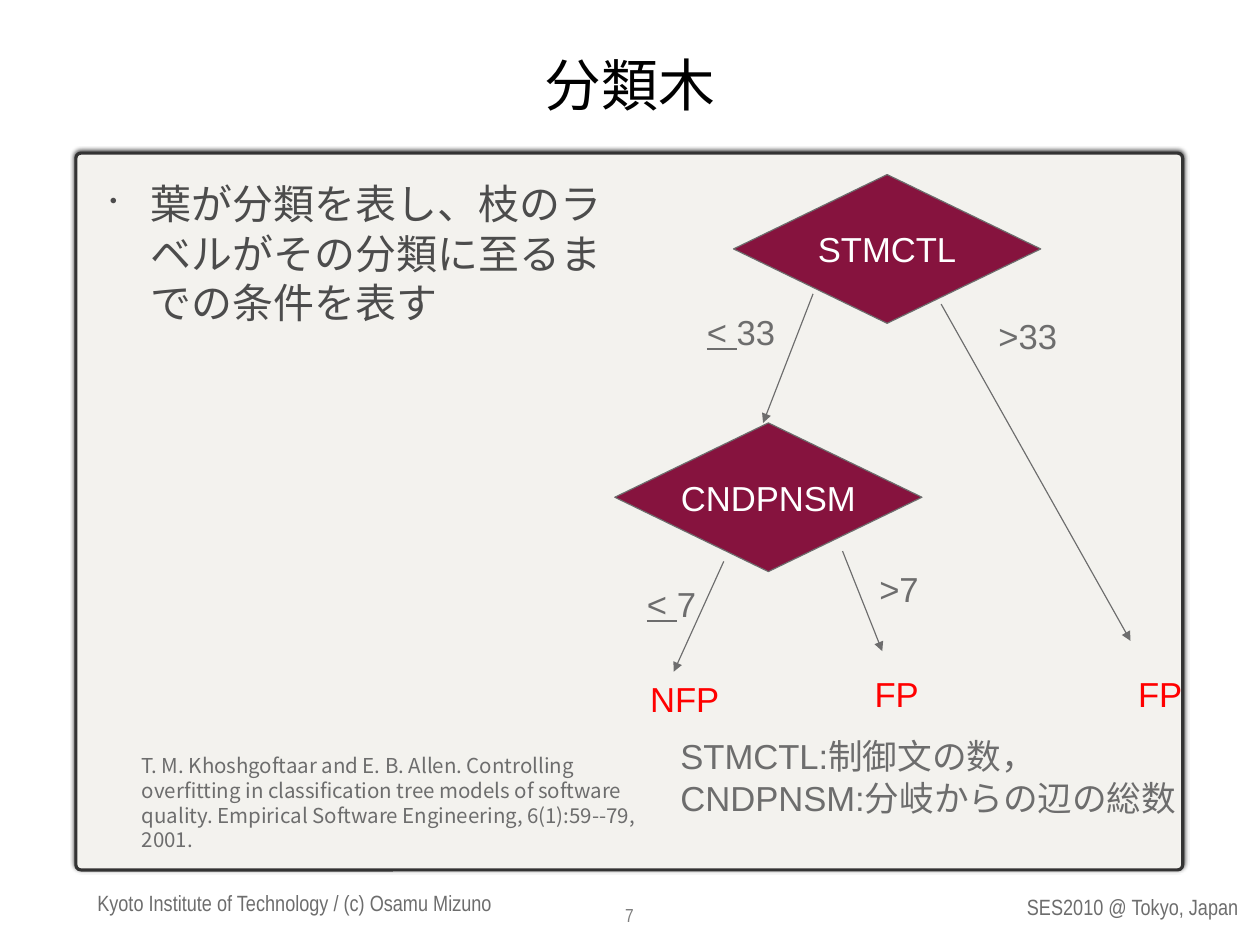
from lxml import etree
from pptx import Presentation
from pptx.dml.color import RGBColor
from pptx.enum.shapes import MSO_CONNECTOR, MSO_SHAPE
from pptx.enum.text import MSO_ANCHOR, PP_ALIGN
from pptx.oxml.ns import qn
from pptx.util import Cm, Pt

LEFT, CENTER, RIGHT = PP_ALIGN.LEFT, PP_ALIGN.CENTER, PP_ALIGN.RIGHT
TOP, MIDDLE = MSO_ANCHOR.TOP, MSO_ANCHOR.MIDDLE
BLACK = RGBColor(0x00, 0x00, 0x00)
WHITE = RGBColor(0xFF, 0xFF, 0xFF)
RED = RGBColor(0xFF, 0x00, 0x00)
MAROON = RGBColor(0x86, 0x13, 0x3E)
GRAY = RGBColor(0x6D, 0x6D, 0x6D)
LIGHT_GRAY = RGBColor(0x7F, 0x7F, 0x7F)
DARK_GRAY = RGBColor(0x4C, 0x4C, 0x4C)
PANEL_FILL = RGBColor(0xF3, 0xF2, 0xEE)
PANEL_LINE = RGBColor(0x33, 0x33, 0x33)
SANS, NARROW = "Arial", "Arial Narrow"

deck = Presentation()
deck.slide_width, deck.slide_height = Cm(28.22), Cm(21.16)
page = deck.slides.add_slide(deck.slide_layouts[6])
shapes = page.shapes


def write(shape, lines, size, font, color, align=LEFT, anchor=TOP,
          inset=(0.28, 0.15), wrap=True):
    """Fill a shape with paragraphs, each a list of run texts."""
    frame = shape.text_frame
    frame.word_wrap = wrap
    frame.vertical_anchor = anchor
    frame.margin_left = frame.margin_right = Cm(inset[0])
    frame.margin_top = frame.margin_bottom = Cm(inset[1])
    for index, spans in enumerate(lines):
        para = frame.add_paragraph() if index else frame.paragraphs[0]
        for text in spans:
            para.add_run().text = text
        para.alignment = align
        para.font.size = Pt(size)
        para.font.name = font
        para.font.color.rgb = color
    return frame.paragraphs


def text_box(left, top, width, height, lines, *style, **options):
    box = shapes.add_textbox(Cm(left), Cm(top), Cm(width), Cm(height))
    return write(box, lines, *style, **options)


# Panel with a soft shadow
panel = shapes.add_shape(MSO_SHAPE.ROUNDED_RECTANGLE,
                         Cm(1.7), Cm(3.43), Cm(24.79), Cm(16.05))
panel.adjustments[0] = 0.007
panel.fill.solid()
panel.fill.fore_color.rgb = PANEL_FILL
panel.line.color.rgb = PANEL_LINE
panel.line.width = Pt(2)
effects = etree.SubElement(panel._element.spPr, qn("a:effectLst"))
shadow = etree.SubElement(effects, qn("a:outerShdw"), blurRad=str(Pt(3)),
                          dist=str(Pt(1)), dir="16200000", rotWithShape="0")
shadow_color = etree.SubElement(shadow, qn("a:srgbClr"), val="000000")
etree.SubElement(shadow_color, qn("a:alpha"), val="80000")

# Footer
text_box(17.88, 19.89, 9.86, 0.81, [["SES2010 @ Tokyo, Japan"]],
         14, NARROW, GRAY, RIGHT, MIDDLE, inset=(0, 0))
text_box(2.18, 19.81, 11, 0.79,
         [["Kyoto Institute of Technology / (c) Osamu Mizuno"]],
         14, NARROW, GRAY, LEFT, MIDDLE, inset=(0, 0))
text_box(13.72, 20.09, 0.76, 0.81, [["7"]], 12, NARROW, LIGHT_GRAY, wrap=False)

# Title
title = text_box(2.36, 0.56, 23.5, 2.84, [["分類木"]],
                 36, NARROW, BLACK, CENTER, MIDDLE, inset=(0.1, 0.1))
title[0].line_spacing = 0.9

# Bulleted statement
body = shapes.add_textbox(Cm(2.36), Cm(3.91), Cm(11.33), Cm(15.27))
properties = body.text_frame.paragraphs[0]._p.get_or_add_pPr()
properties.set("marL", str(Cm(0.91)))
properties.set("indent", str(-Cm(0.91)))
etree.SubElement(properties, qn("a:buSzPct"), val="52000")
etree.SubElement(properties, qn("a:buChar"), char="•")
write(body, [["葉が分類を表し、枝のラベルがその分類に至るまでの条件を表す"]],
      26, "Lato", DARK_GRAY, inset=(0.1, 0.1))

# Decision nodes
for name, left, top in (("STMCTL", 16.43, 3.91), ("CNDPNSM", 13.77, 9.47)):
    node = shapes.add_shape(MSO_SHAPE.DIAMOND, Cm(left), Cm(top), Cm(6.88), Cm(3.33))
    node.shadow.inherit = False
    node.fill.solid()
    node.fill.fore_color.rgb = MAROON
    node.line.color.rgb = GRAY
    node.line.width = Pt(0.75)
    write(node, [[name]], 22, SANS, WHITE, CENTER, MIDDLE, wrap=False)

# Branch arrows
for points in ((18.21, 6.58, 17.09, 9.47), (21.08, 6.81, 25.32, 14.35),
               (16.21, 12.57, 15.09, 15.04), (18.87, 12.34, 19.76, 14.58)):
    branch = shapes.add_connector(MSO_CONNECTOR.STRAIGHT, *map(Cm, points))
    branch.line.color.rgb = GRAY
    branch.line.width = Pt(0.75)
    etree.SubElement(branch.line._get_or_add_ln(), qn("a:tailEnd"), type="triangle")
    etree.SubElement(branch._element.spPr, qn("a:effectLst"))

# Branch conditions and leaves
for spans, left, top, width, color in (
        (["< ", "33"], 15.54, 6.81, 2.11, GRAY),
        ([">33"], 22.07, 6.91, 1.9, GRAY),
        (["< ", "7"], 14.2, 12.9, 1.68, GRAY),
        ([">7"], 19.41, 12.57, 1.45, GRAY),
        (["NFP"], 14.27, 15.04, 2.13, RED),
        (["FP"], 19.3, 14.91, 1.57, RED),
        (["FP"], 25.2, 14.91, 1.57, RED)):
    label = text_box(left, top, width, 1.22, [spans], 22, SANS, color, CENTER, wrap=False)
    if len(spans) > 1:
        label[0].runs[0].font.underline = True

# Legend and reference
text_box(14.96, 16.31, 11.81, 2.16,
         [["STMCTL:制御文の数，"], ["CNDPNSM:分岐からの辺の総数"]], 22, SANS, GRAY)
reference = text_box(
    2.9, 16.71, 12.24, 2.51,
    [["T. M. Khoshgoftaar and E. B. Allen. Controlling overfitting in "
      "classification tree models of software quality. Empirical Software "
      "Engineering, 6(1):59--79, 2001."]], 13, "Noto Sans CJK JP", GRAY)
reference[0].line_spacing = Pt(15.7)

deck.save("out.pptx")
